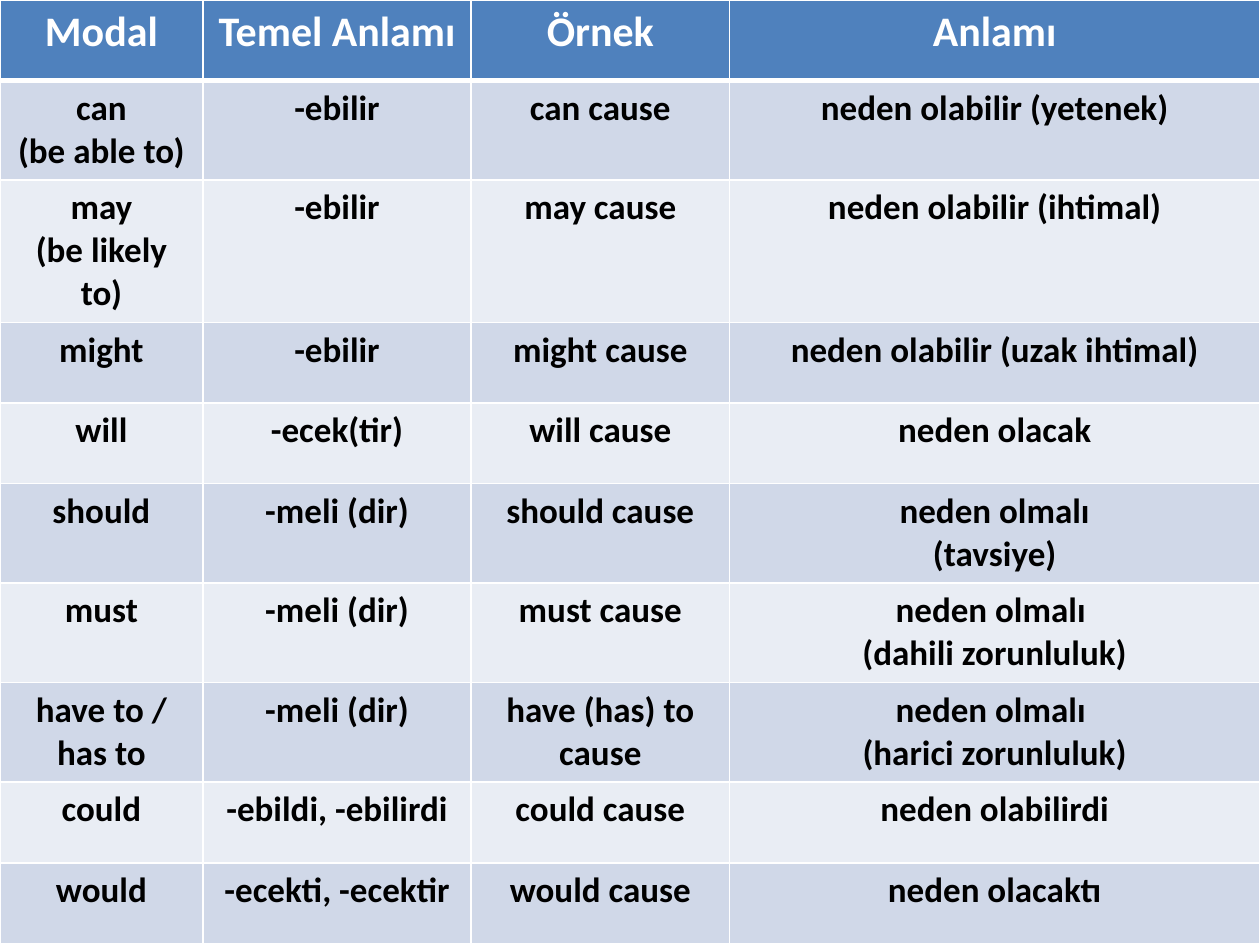
from lxml.etree import SubElement
from pptx import Presentation
from pptx.dml.color import RGBColor
from pptx.enum.text import PP_ALIGN
from pptx.oxml.ns import qn
from pptx.util import Inches, Pt

HEADER_BLUE = RGBColor(0x4F, 0x81, 0xBD)
BAND_DARK = RGBColor(0xD0, 0xD8, 0xE8)
BAND_LIGHT = RGBColor(0xE9, 0xED, 0xF4)
WHITE = RGBColor(0xFF, 0xFF, 0xFF)
BLACK = RGBColor(0x00, 0x00, 0x00)

SLIDE_WIDTH, SLIDE_HEIGHT = 10, 7.5
COLUMN_WIDTHS = [1.61, 2.13, 2.05, 4.21]
# Row height by the number of text lines in the tallest cell
LINE_HEIGHTS = {1: 0.64, 2: 0.79, 3: 1.13}

HEADINGS = ["Modal", "Temel Anlamı", "Örnek", "Anlamı"]
# Line count, then the four cells
MODALS = [
    (2, "can\n(be able to)", "-ebilir", "can cause", "neden olabilir (yetenek)"),
    (3, "may\n(be likely to)", "-ebilir", "may cause", "neden olabilir (ihtimal)"),
    (1, "might", "-ebilir", "might cause", "neden olabilir (uzak ihtimal)"),
    (1, "will", "-ecek(tir)", "will cause", "neden olacak"),
    (2, "should", "-meli (dir)", "should cause", "neden olmalı\n(tavsiye)"),
    (2, "must", "-meli (dir)", "must cause", "neden olmalı \n(dahili zorunluluk)"),
    (2, "have to / has to", "-meli (dir)", "have (has) to cause",
     "neden olmalı \n(harici zorunluluk)"),
    (1, "could", "-ebildi, -ebilirdi", "could cause", "neden olabilirdi"),
    (1, "would", "-ecekti, -ecektir", "would cause", "neden olacaktı"),
]


def write_text(frame, text, size=20, color=BLACK, bold=True, font="Calibri"):
    """Write centred text, one paragraph per line."""
    frame.text = text
    for para in frame.paragraphs:
        para.alignment = PP_ALIGN.CENTER
        for span in para.runs:
            span.font.name = font
            span.font.size = Pt(size)
            span.font.bold = bold
            span.font.color.rgb = color


def add_borders(cell, top=1, bottom=1):
    """Draw white cell borders, widths in points."""
    properties = cell._tc.get_or_add_tcPr()
    for side, width in (("L", 1), ("R", 1), ("T", top), ("B", bottom)):
        line = SubElement(properties, qn(f"a:ln{side}"), w=str(Pt(width)))
        fill = SubElement(line, qn("a:solidFill"))
        SubElement(fill, qn("a:srgbClr"), val=str(WHITE))


def fill_row(row, texts, fill, borders, **text_format):
    for cell, text in zip(row.cells, texts):
        write_text(cell.text_frame, text, **text_format)
        add_borders(cell, **borders)
        cell.fill.solid()
        cell.fill.fore_color.rgb = fill


def add_modal_table(page):
    table = page.shapes.add_table(
        len(MODALS) + 1, len(HEADINGS), 0, 0,
        Inches(SLIDE_WIDTH), Inches(SLIDE_HEIGHT)).table
    for column, width in zip(table.columns, COLUMN_WIDTHS):
        column.width = Inches(width)

    # Header row
    header = table.rows[0]
    header.height = Inches(LINE_HEIGHTS[1])
    fill_row(header, HEADINGS, HEADER_BLUE, {"bottom": 3}, size=24, color=WHITE)

    # Banded body rows
    for index, (lines, *texts) in enumerate(MODALS):
        row = table.rows[index + 1]
        row.height = Inches(LINE_HEIGHTS[lines])
        fill_row(row, texts, BAND_LIGHT if index % 2 else BAND_DARK,
                 {"top": 1 if index else 3})


def main():
    deck = Presentation()
    deck.slide_width = Inches(SLIDE_WIDTH)
    deck.slide_height = Inches(SLIDE_HEIGHT)
    page = deck.slides.add_slide(deck.slide_layouts[6])
    add_modal_table(page)
    deck.save("out.pptx")


if __name__ == "__main__":
    main()
